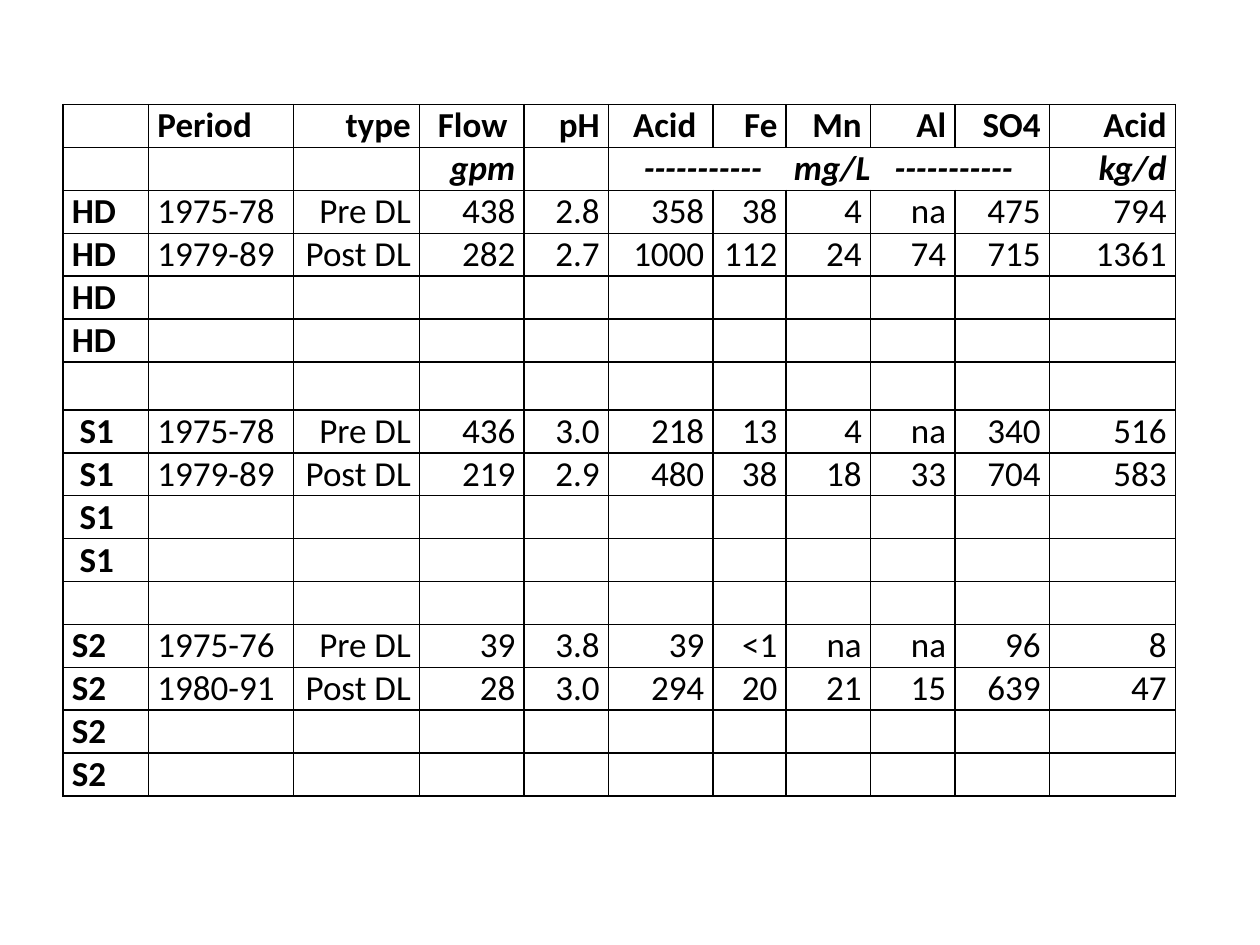
from dataclasses import dataclass

from lxml.etree import SubElement
from pptx import Presentation
from pptx.dml.color import RGBColor
from pptx.enum.text import PP_ALIGN as Align
from pptx.oxml.ns import qn
from pptx.util import Inches, Pt


@dataclass(frozen=True)
class Theme:
    font: str = "Calibri"
    size: int = 20
    ink: str = "000000"
    border: float = 1
    inset: float = 0.07


THEME = Theme()

# Content
HEADINGS = ["", "Period", "type", "Flow ", "pH", "Acid ", "Fe", "Mn", "Al", "SO4", "Acid"]
UNITS = ["", "", "", "gpm", "", "-----------\tmg/L\t-----------", "", "", "", "", "kg/d"]
STATIONS = [
    ("HD", [
        ["1975-78", "Pre DL", "438", "2.8", "358", "38", "4", "na", "475", "794"],
        ["1979-89", "Post DL", "282", "2.7", "1000", "112", "24", "74", "715", "1361"],
    ]),
    (" S1", [
        ["1975-78", "Pre DL", "436", "3.0", "218", "13", "4", "na", "340", "516"],
        ["1979-89", "Post DL", "219", "2.9", "480", "38", "18", "33", "704", "583"],
    ]),
    ("S2", [
        ["1975-76", "Pre DL", "39", "3.8", "39", "<1", "na", "na", "96", "8"],
        ["1980-91", "Post DL", "28", "3.0", "294", "20", "21", "15", "639", "47"],
    ]),
]
ROWS_PER_STATION = 4

# Grid, in inches
LEFT, TOP = 0.5, 0.83
COLUMN_WIDTHS = [0.68, 1.15, 1, 0.83, 0.67, 0.83, 0.58, 0.67, 0.67, 0.75, 1]
ROW_HEIGHT, FIRST_GAP_HEIGHT = 0.34, 0.38
UNIT_ROW, FIRST_GAP_ROW = 1, 6
SPAN_FIRST, SPAN_LAST = 5, 9
SPAN_INSET, SPAN_TABS = 0.28, (1.19, 1.99)


def build_rows():
    blank = [""] * len(HEADINGS)
    rows = [HEADINGS, UNITS]
    for index, (station, readings) in enumerate(STATIONS):
        if index:
            rows.append(blank)
        unused = [blank[1:]] * (ROWS_PER_STATION - len(readings))
        rows += [[station, *values] for values in readings + unused]
    return rows


def add_borders(cell):
    properties = cell._tc.get_or_add_tcPr()
    for position, side in enumerate(("lnL", "lnR", "lnT", "lnB")):
        line = SubElement(properties, qn(f"a:{side}"), w=str(Pt(THEME.border)))
        fill = SubElement(line, qn("a:solidFill"))
        SubElement(fill, qn("a:srgbClr"), val=THEME.ink)
        properties.insert(position, line)


def add_tabs(paragraph, stops):
    tabs = SubElement(paragraph._p.get_or_add_pPr(), qn("a:tabLst"))
    for stop in stops:
        SubElement(tabs, qn("a:tab"), pos=str(Inches(stop)), algn="l")


def fill_cell(cell, text, row, column):
    cell.fill.background()
    cell.margin_left = cell.margin_right = Inches(THEME.inset)
    cell.margin_top = cell.margin_bottom = 0
    add_borders(cell)
    if not text:
        return
    cell.text_frame.text = text
    paragraph = cell.text_frame.paragraphs[0]
    paragraph.alignment = Align.LEFT if column < 2 else Align.RIGHT
    for run in paragraph.runs:
        font = run.font
        font.name, font.size = THEME.font, Pt(THEME.size)
        font.bold = row <= UNIT_ROW or column == 0
        font.italic = row == UNIT_ROW
        font.color.rgb = RGBColor.from_string(THEME.ink)


def add_water_table(slide):
    rows = build_rows()
    heights = [FIRST_GAP_HEIGHT if row == FIRST_GAP_ROW else ROW_HEIGHT
               for row in range(len(rows))]
    table = slide.shapes.add_table(
        len(rows), len(COLUMN_WIDTHS), Inches(LEFT), Inches(TOP),
        Inches(sum(COLUMN_WIDTHS)), Inches(sum(heights))).table
    table.first_row = table.horz_banding = False
    for column, width in zip(table.columns, COLUMN_WIDTHS):
        column.width = Inches(width)
    for row, height in zip(table.rows, heights):
        row.height = Inches(height)
    for row, values in enumerate(rows):
        for column, text in enumerate(values):
            fill_cell(table.cell(row, column), text, row, column)

    # Shared unit of the five concentrations
    unit = table.cell(UNIT_ROW, SPAN_FIRST)
    unit.merge(table.cell(UNIT_ROW, SPAN_LAST))
    unit.margin_left = Inches(SPAN_INSET)
    paragraph = unit.text_frame.paragraphs[0]
    paragraph.alignment = Align.LEFT
    add_tabs(paragraph, SPAN_TABS)


def main():
    presentation = Presentation()
    presentation.slide_width, presentation.slide_height = Inches(10), Inches(7.5)
    slide = presentation.slides.add_slide(presentation.slide_layouts[6])
    add_water_table(slide)
    presentation.save("out.pptx")


if __name__ == "__main__":
    main()
